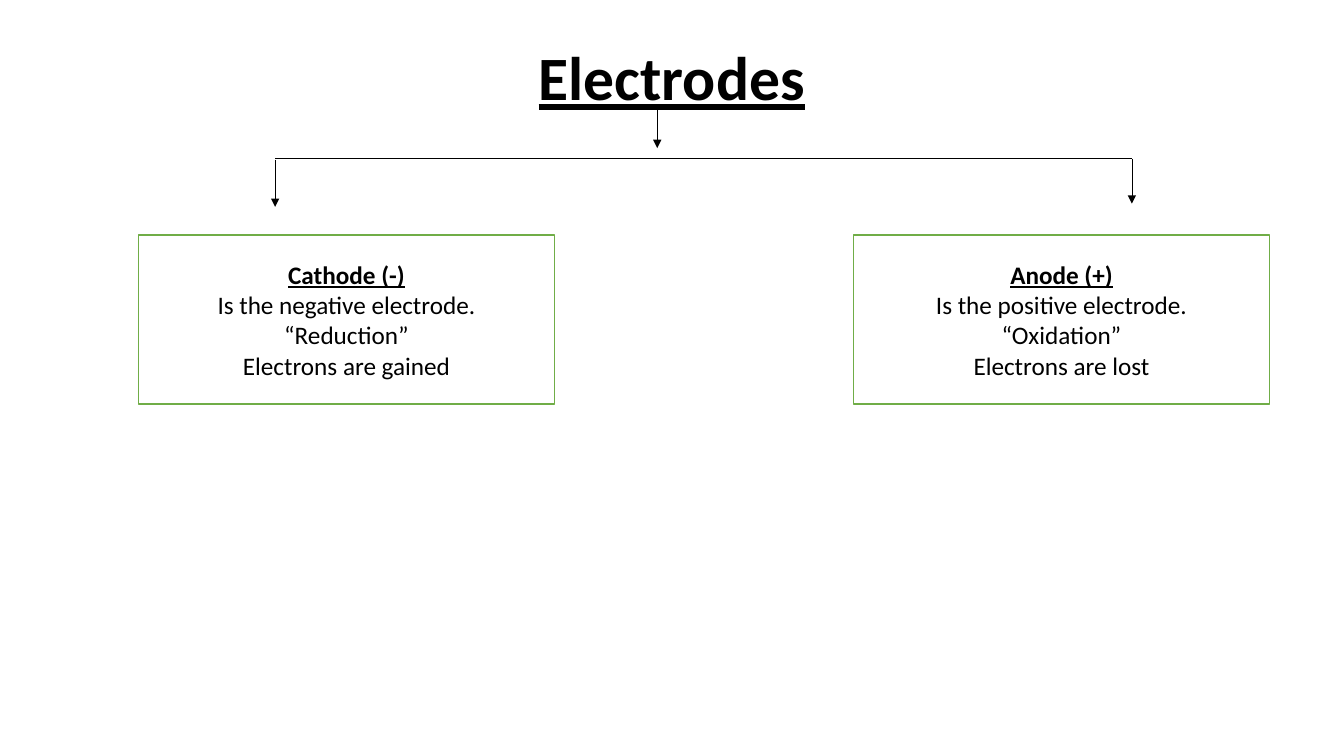
"""Build a slide that contrasts the two electrodes, cathode and anode."""
from lxml.etree import SubElement
from pptx import Presentation
from pptx.dml.color import RGBColor
from pptx.enum.shapes import MSO_CONNECTOR as CONNECTOR, MSO_SHAPE as SHAPE
from pptx.enum.text import MSO_ANCHOR as ANCHOR, PP_ALIGN as ALIGN
from pptx.oxml.ns import qn
from pptx.util import Pt

EMU_PER_PX = 9525
FONT = "Calibri"
BLACK, WHITE, GREEN = "000000", "FFFFFF", "70AD47"
BAR_TOP, BAR_LEFT, BAR_RIGHT = 151, 262, 1078
BOX_TOP, BOX_WIDTH, BOX_HEIGHT = 224, 396, 161


def px(*lengths):
    return [length * EMU_PER_PX for length in lengths]


def paint(color_format, color):
    color_format.rgb = RGBColor.from_string(color)


def style_paragraph(paragraph, size, heading=False):
    paragraph.alignment = ALIGN.CENTER
    for run in paragraph.runs:
        run.font.name = FONT
        run.font.size = Pt(size)
        run.font.bold = run.font.underline = heading
        paint(run.font.color, BLACK)


def add_title(slide, text):
    text_box = slide.shapes.add_textbox(*px(88, 37, 1104, 80))
    text_frame = text_box.text_frame
    text_frame.word_wrap = True
    text_frame.vertical_anchor = ANCHOR.MIDDLE
    text_frame.text = text
    paragraph = text_frame.paragraphs[0]
    paragraph.line_spacing = 0.9
    style_paragraph(paragraph, 44, heading=True)


def add_line(slide, start, end, arrow=False):
    connector = slide.shapes.add_connector(CONNECTOR.STRAIGHT, *px(*start, *end))
    connector.line.width = Pt(0.5)
    paint(connector.line.color, BLACK)
    if arrow:
        SubElement(connector.line._get_or_add_ln(), qn("a:tailEnd"), type="triangle")
    SubElement(connector._element.spPr, qn("a:effectLst"))


def add_electrode(slide, left, lines):
    box = slide.shapes.add_shape(
        SHAPE.RECTANGLE, *px(left, BOX_TOP, BOX_WIDTH, BOX_HEIGHT))
    box.shadow.inherit = False
    box.fill.solid()
    paint(box.fill.fore_color, WHITE)
    paint(box.line.color, GREEN)
    box.line.width = Pt(1)
    text_frame = box.text_frame
    text_frame.word_wrap = True
    text_frame.vertical_anchor = ANCHOR.MIDDLE
    text_frame.text = "\n".join(lines)
    for index, paragraph in enumerate(text_frame.paragraphs):
        style_paragraph(paragraph, 18, heading=index == 0)


def main():
    presentation = Presentation()
    presentation.slide_width, presentation.slide_height = px(1280, 720)
    slide = presentation.slides.add_slide(presentation.slide_layouts[6])

    add_title(slide, "Electrodes")
    add_line(slide, (626, 103), (626, 141), arrow=True)
    add_line(slide, (BAR_LEFT, BAR_TOP), (BAR_RIGHT, BAR_TOP))
    add_line(slide, (BAR_LEFT, BAR_TOP + 1), (BAR_LEFT, 197), arrow=True)
    add_line(slide, (BAR_RIGHT, BAR_TOP), (BAR_RIGHT, 194), arrow=True)
    add_electrode(slide, 132, ["Cathode (-)", "Is the negative electrode.",
                               "“Reduction”", "Electrons are gained"])
    add_electrode(slide, 813, ["Anode (+)", "Is the positive electrode.",
                               "“Oxidation”", "Electrons are lost"])

    presentation.save("out.pptx")


if __name__ == "__main__":
    main()
